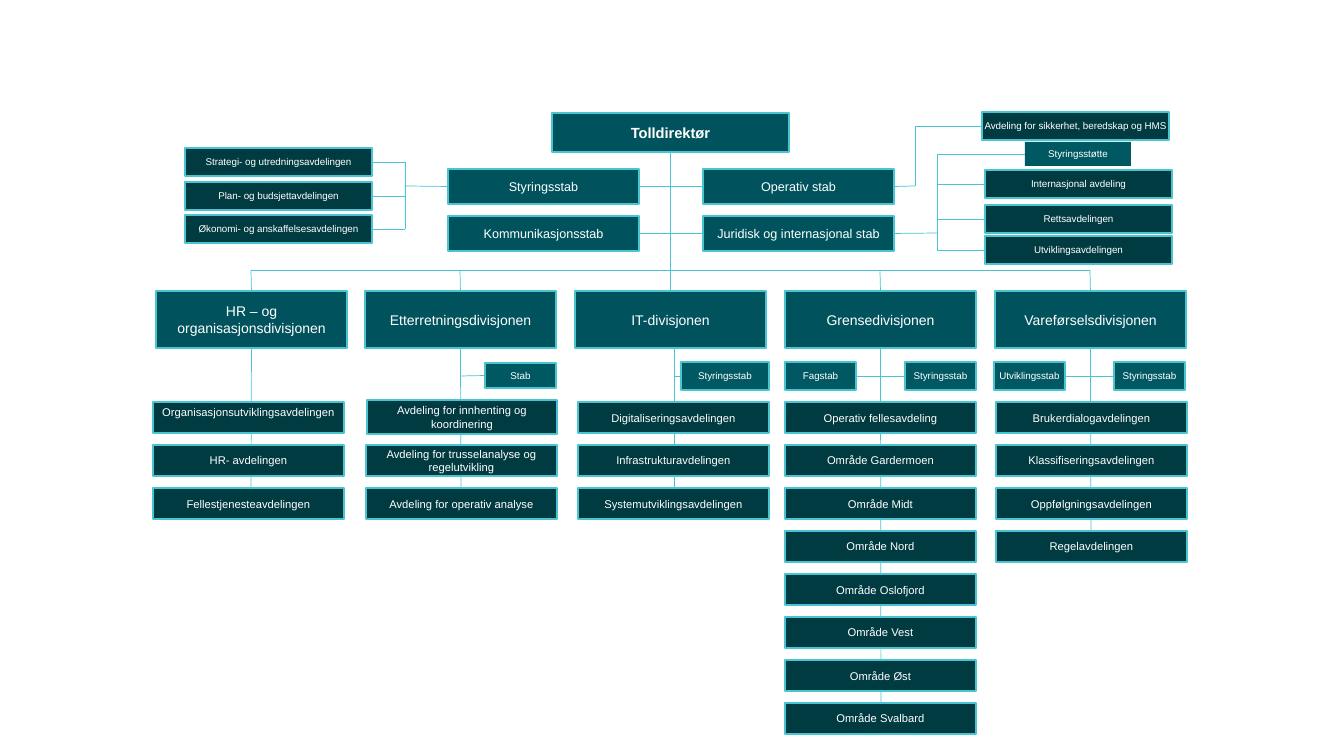
"""Build the organisation chart of the customs directorate on one slide."""
from lxml import etree
from pptx import Presentation
from pptx.dml.color import RGBColor
from pptx.enum.shapes import MSO_CONNECTOR, MSO_SHAPE
from pptx.enum.text import MSO_ANCHOR, PP_ALIGN
from pptx.oxml.ns import qn
from pptx.util import Pt

RECTANGLE = MSO_SHAPE.RECTANGLE
STRAIGHT = MSO_CONNECTOR.STRAIGHT
MIDDLE = MSO_ANCHOR.MIDDLE
CENTER = PP_ALIGN.CENTER
TEAL = RGBColor(0x00, 0x53, 0x5C)
DARK_TEAL = RGBColor(0x00, 0x3B, 0x41)
STAFF_TEAL = RGBColor(0x00, 0x58, 0x62)
CYAN = RGBColor(0x49, 0xC4, 0xD1)
WHITE = RGBColor(0xFF, 0xFF, 0xFF)

EMU_PER_PX = 914400 / 100.8
SLIDE_SIZE = (1344, 756)
FONT = "Arial"

DIRECTOR = ("Tolldirektør", (552, 113, 237, 39))
STAFF_ROWS = [
    (169, "Styringsstab", "Operativ stab"),
    (216, "Kommunikasjonsstab", "Juridisk og internasjonal stab"),
]
STAFF_LEFTS = (448, 703)
STAFF_HEIGHT = 35
STAFF_DEPARTMENTS = [
    ("Strategi- og utredningsavdelingen", 185, 148),
    ("Plan- og budsjettavdelingen", 185, 182),
    ("Økonomi- og anskaffelsesavdelingen", 185, 215),
    ("Avdeling for sikkerhet, beredskap og HMS", 982, 112),
    ("Internasjonal avdeling", 985, 170),
    ("Rettsavdelingen", 985, 205),
    ("Utviklingsavdelingen", 985, 236),
]
LEGAL_SUPPORT = ("Styringsstøtte", (1025, 142, 106, 24))
DIVISIONS = [
    ("HR – og organisasjonsdivisjonen", 251, 153, [
        "Organisasjonsutviklingsavdelingen", "HR- avdelingen", "Fellestjenesteavdelingen"]),
    ("Etterretningsdivisjonen", 461, 366, [
        "Avdeling for innhenting og\vkoordinering", "Avdeling for trusselanalyse og\vregelutvikling",
        "Avdeling for operativ analyse"]),
    ("IT-divisjonen", 674, 578, [
        "Digitaliseringsavdelingen", "Infrastrukturavdelingen", "Systemutviklingsavdelingen"]),
    ("Grensedivisjonen", 881, 785, [
        "Operativ fellesavdeling", "Område Gardermoen", "Område Midt", "Område Nord",
        "Område Oslofjord", "Område Vest", "Område Øst", "Område Svalbard"]),
    ("Vareførselsdivisjonen", 1091, 996, [
        "Brukerdialogavdelingen", "Klassifiseringsavdelingen", "Oppfølgningsavdelingen",
        "Regelavdelingen"]),
]
ADJUSTED_PLACES = {"Avdeling for innhenting og\vkoordinering": (367, 400, 190, 34)}
RAISED_DEPARTMENT = "Organisasjonsutviklingsavdelingen"
DIVISION_STAFF = [
    ("Stab", (485, 363, 71, 25)),
    ("Styringsstab", (681, 362, 88, 28)),
    ("Fagstab", (785, 362, 71, 28)),
    ("Styringsstab", (905, 362, 71, 28)),
    ("Utviklingsstab", (994, 362, 71, 28)),
    ("Styringsstab", (1114, 362, 71, 28)),
]
STAFF_LINES = [
    (639, 186, 703, 186), (639, 233, 703, 233),
    (405, 186, 448, 186), (405, 162, 405, 229),
    (372, 162, 405, 162), (372, 196, 405, 196), (372, 229, 405, 229),
    (894, 186, 915, 186), (915, 126, 915, 186), (915, 126, 982, 126),
    (894, 233, 938, 233), (937, 154, 937, 250), (937, 154, 1025, 154),
    (937, 184, 985, 184), (937, 219, 985, 219), (937, 250, 985, 250),
    (461, 376, 485, 376), (674, 376, 681, 376),
    (856, 376, 905, 376), (1065, 376, 1114, 376),
]
WIDTH = 191
DIVISION_TOP, DIVISION_HEIGHT = 291, 57
DEPARTMENT_TOP, DEPARTMENT_HEIGHT, DEPARTMENT_PITCH = 402, 31, 43
BUS_Y = 270


def px(length):
    """Turn a length in px into EMU."""
    return round(length * EMU_PER_PX)


def add_box(slide, boxes, text, place, fill, size, bold=False, wrap=False, inset=None, border=True):
    """Draw one unit of the organisation and remember where it stands."""
    box = slide.shapes.add_shape(RECTANGLE, *map(px, place))
    box.shadow.inherit = False
    box.fill.solid()
    box.fill.fore_color.rgb = fill
    if border:
        box.line.color.rgb = CYAN
        box.line.width = Pt(1)
    else:
        box.line.fill.background()
    frame = box.text_frame
    frame.text = text
    frame.word_wrap = wrap
    frame.vertical_anchor = MIDDLE
    if inset is not None:
        frame.margin_left = frame.margin_right = px(inset)
        frame.margin_top = frame.margin_bottom = px(inset)
    paragraph = frame.paragraphs[0]
    paragraph.alignment = CENTER
    for run in paragraph.runs:
        run.font.name = FONT
        run.font.size = Pt(size)
        run.font.bold = bold
        run.font.color.rgb = WHITE
    boxes.append((box, place))
    return box


def find_site(boxes, x, y):
    """Return the box and side whose middle lies at a point, if any."""
    for box, (left, top, width, height) in boxes:
        center, middle = left + width / 2, top + height / 2
        sides = [(center, top), (left, middle), (center, top + height), (left + width, middle)]
        for site, (side_x, side_y) in enumerate(sides):
            if abs(side_x - x) <= 1 and abs(side_y - y) <= 1:
                return box, site
    return None


def add_line(slide, boxes, x1, y1, x2, y2):
    """Draw a line, joined to boxes where it meets the middle of a side."""
    line = slide.shapes.add_connector(STRAIGHT, px(x1), px(y1), px(x2), px(y2))
    line.line.color.rgb = CYAN
    line.line.width = Pt(0.5)
    etree.SubElement(line._element.spPr, qn("a:effectLst"))
    start, end = find_site(boxes, x1, y1), find_site(boxes, x2, y2)
    if start:
        line.begin_connect(*start)
    if end:
        line.end_connect(*end)


def add_divisions(slide, boxes):
    """Draw the divisions with their spines and departments."""
    centers = []
    for column, (division, spine_x, left, departments) in enumerate(DIVISIONS):
        division_left = 156 + 839 * column // 4
        centers.append(division_left + WIDTH // 2)
        add_box(slide, boxes, division, (division_left, DIVISION_TOP, WIDTH, DIVISION_HEIGHT),
                TEAL, 10, wrap=True)
        last_top = DEPARTMENT_TOP + DEPARTMENT_PITCH * (len(departments) - 1)
        add_line(slide, boxes, spine_x, DIVISION_TOP + DIVISION_HEIGHT, spine_x, last_top)
        for row, department in enumerate(departments):
            place = (left, DEPARTMENT_TOP + DEPARTMENT_PITCH * row, WIDTH, DEPARTMENT_HEIGHT)
            box = add_box(slide, boxes, department, ADJUSTED_PLACES.get(department, place),
                          DARK_TEAL, 8)
            if department == RAISED_DEPARTMENT:
                box.text_frame.margin_top = 0
                box.text_frame.margin_bottom = px(12)
    return centers


def main():
    """Build and save the slide."""
    deck = Presentation()
    deck.slide_width, deck.slide_height = map(px, SLIDE_SIZE)
    slide = deck.slides.add_slide(deck.slide_layouts[6])
    boxes = []

    add_box(slide, boxes, *DIRECTOR, TEAL, 10.5, bold=True, wrap=True)
    centers = add_divisions(slide, boxes)
    for top, *staffs in STAFF_ROWS:
        for left, staff in zip(STAFF_LEFTS, staffs):
            add_box(slide, boxes, staff, (left, top, WIDTH, STAFF_HEIGHT), TEAL, 9, wrap=True)
    for department, left, top in STAFF_DEPARTMENTS:
        add_box(slide, boxes, department, (left, top, 187, 28), DARK_TEAL, 7)
    for staff, place in DIVISION_STAFF:
        add_box(slide, boxes, staff, place, STAFF_TEAL, 7, inset=4)
    add_box(slide, boxes, *LEGAL_SUPPORT, STAFF_TEAL, 7, inset=4, border=False)

    trunk = len(centers) // 2
    add_line(slide, boxes, centers[0], BUS_Y, centers[-1], BUS_Y)
    for column, center in enumerate(centers):
        drop_top = 152 if column == trunk else BUS_Y
        add_line(slide, boxes, center, drop_top, center, DIVISION_TOP)
    for ends in STAFF_LINES:
        add_line(slide, boxes, *ends)
    deck.save("out.pptx")


if __name__ == "__main__":
    main()
